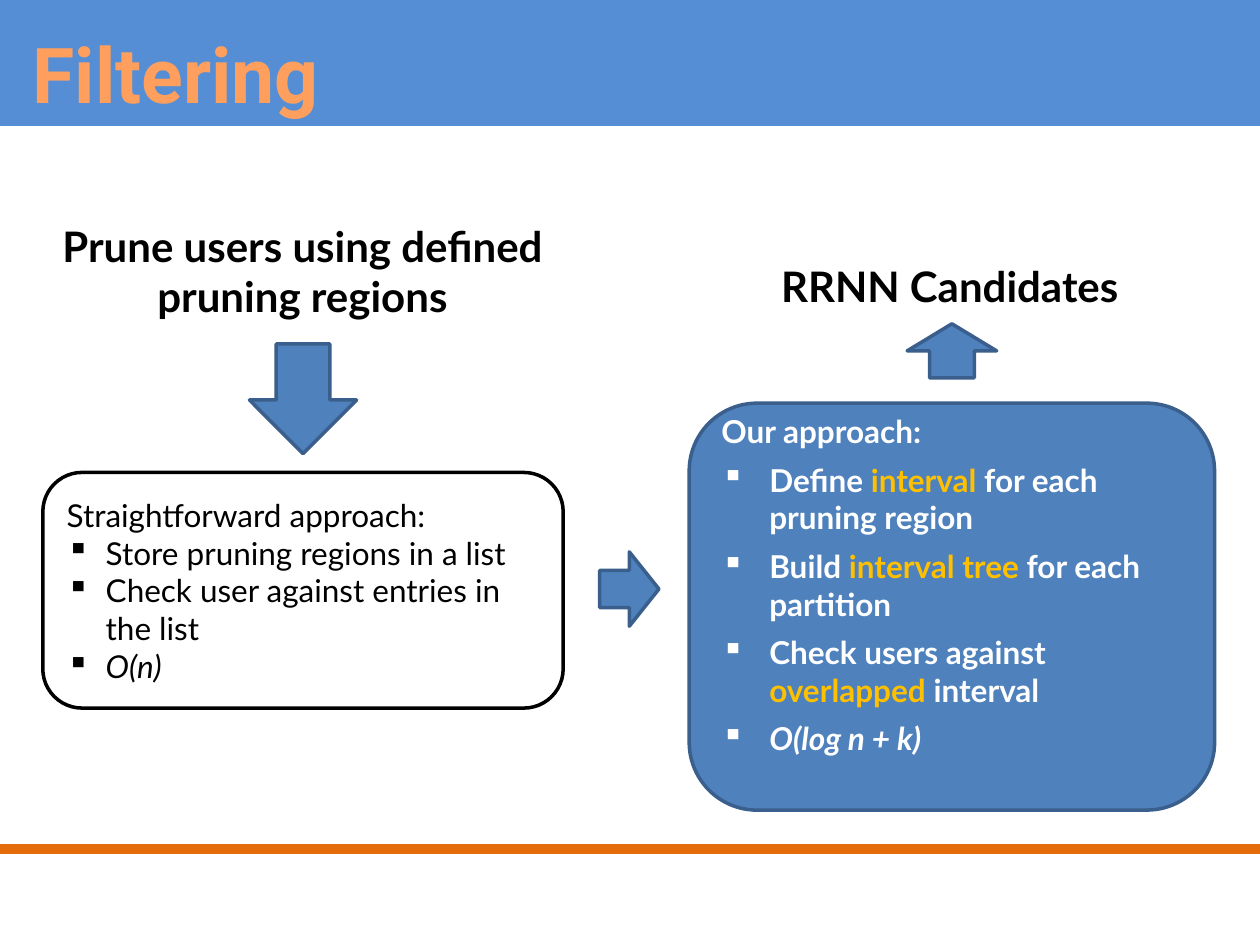
from lxml import etree
from pptx import Presentation
from pptx.dml.color import RGBColor
from pptx.enum import shapes, text
from pptx.oxml import ns
from pptx.util import Inches, Pt

COLORS = {
    "banner": "558ED5", "title": "FF9F5D", "rule": "E46C0A", "ink": "000000",
    "blue": "4F81BD", "edge": "3A5F8C", "white": "FFFFFF", "accent": "FFC000",
}
HEADING = {"name": "Lato", "size": Pt(24), "bold": True}
PLAIN = {"name": "Lato", "size": Pt(18), "bold": False}
STRONG = {"name": "Lato", "size": Pt(18), "bold": True}

# Each paragraph is a list of (words, style) runs.
STRAIGHTFORWARD = [
    [("Straightforward approach:", "")],
    [("Store pruning regions in a list", "")],
    [("Check user against entries in the list", "")],
    [("O(n)", "italic")],
]
OUR_APPROACH = [
    [("Our approach:", "")],
    [("Define ", ""), ("interval", "accent"), (" for each pruning region", "")],
    [("Build ", ""), ("interval tree ", "accent"), ("for each partition", "")],
    [("Check users against ", ""), ("overlapped ", "accent"), ("interval", "")],
    [("O(log n + k)", "italic")],
]


def rgb(name):
    return RGBColor.from_string(COLORS[name])


def box(left, top, width, height):
    return [Inches(v) for v in (left, top, width, height)]


def add_run(p, words, color, font):
    r = p.add_run()
    r.text = words
    for name, value in font.items():
        setattr(r.font, name, value)
    r.font.color.rgb = rgb(color)


def add_bullet(p, indent):
    pPr = p._p.get_or_add_pPr()
    pPr.set("marL", str(Inches(indent)))
    pPr.set("indent", str(-Inches(indent)))
    etree.SubElement(pPr, ns.qn("a:buChar")).set("char", "▪")


def add_preset(s, kind, area, fill, line):
    sp = s.shapes.add_shape(kind, *area)
    sp.shadow.inherit = False
    if fill:
        sp.fill.solid()
        sp.fill.fore_color.rgb = rgb(fill)
    else:
        sp.fill.background()
    sp.line.color.rgb = rgb(line)
    sp.line.width = Pt(2)
    return sp


def add_banner(s, width):
    builder = s.shapes.build_freeform(0, 0, scale=Inches(1))
    builder.add_line_segments([(width, 0), (width, 1.02), (3.95, 1.26), (0, 1.41)])
    sp = builder.convert_to_shape()
    sp.shadow.inherit = False
    sp.fill.solid()
    sp.fill.fore_color.rgb = rgb("banner")
    sp.line.fill.background()
    # The banner goes behind the title placeholder.
    s.shapes._spTree.insert(2, sp._element)


def add_rule(s, width, y):
    line = s.shapes.add_connector(
        shapes.MSO_CONNECTOR.STRAIGHT, 0, Inches(y), Inches(width), Inches(y))
    line.line.color.rgb = rgb("rule")
    line.line.width = Pt(6)
    etree.SubElement(line._element.spPr, ns.qn("a:effectLst"))


def fill_title(s, area, words):
    sp = s.shapes.title
    sp.left, sp.top, sp.width, sp.height = area
    tf = sp.text_frame
    tf.word_wrap = False
    tf.auto_size = text.MSO_AUTO_SIZE.NONE
    p = tf.paragraphs[0]
    p.alignment = text.PP_ALIGN.LEFT
    add_run(p, words, "title", {"name": "Roboto", "size": Pt(44), "bold": True})


def add_heading(s, area, words, wrap):
    tf = s.shapes.add_textbox(*area).text_frame
    tf.word_wrap = wrap
    p = tf.paragraphs[0]
    p.alignment = text.PP_ALIGN.CENTER if wrap else text.PP_ALIGN.LEFT
    add_run(p, words, "ink", HEADING)


def add_card(s, area, paragraphs, fill, line, color, font, indent, gap, bottom):
    """Rounded box with a lead line followed by a bulleted list."""
    sp = add_preset(s, shapes.MSO_SHAPE.ROUNDED_RECTANGLE, area, fill, line)
    tf = sp.text_frame
    tf.word_wrap = True
    tf.vertical_anchor = text.MSO_ANCHOR.MIDDLE
    tf.margin_bottom = Inches(bottom)
    for i, runs in enumerate(paragraphs):
        p = tf.add_paragraph() if i else tf.paragraphs[0]
        p.alignment = text.PP_ALIGN.LEFT
        p.space_after = Pt(gap)
        if i:
            add_bullet(p, indent)
        for words, style in runs:
            add_run(p, words, "accent" if style == "accent" else color,
                    {**font, "italic": style == "italic"})


def build_filtering_slide(prs):
    s = prs.slides.add_slide(prs.slide_layouts[5])
    add_banner(s, 10)
    add_rule(s, 10, 6.74)
    fill_title(s, box(0.16, 0.16, 2.78, 0.84), "Filtering")

    add_heading(s, box(0.34, 1.7, 4.12, 0.91),
                "Prune users using defined pruning regions", True)
    add_card(s, box(0.34, 3.75, 4.13, 1.87), STRAIGHTFORWARD,
             None, "ink", "ink", PLAIN, indent=0.31, gap=0, bottom=0.05)
    add_card(s, box(5.47, 3.2, 4.17, 3.23), OUR_APPROACH,
             "blue", "edge", "white", STRONG, indent=0.38, gap=6, bottom=0.4)
    add_heading(s, box(6.1, 2.02, 2.92, 0.5), "RRNN Candidates", False)

    for kind, area in (
        (shapes.MSO_SHAPE.RIGHT_ARROW, box(4.76, 4.38, 0.47, 0.59)),
        (shapes.MSO_SHAPE.DOWN_ARROW, box(1.98, 2.73, 0.85, 0.87)),
        (shapes.MSO_SHAPE.UP_ARROW, box(7.2, 2.57, 0.71, 0.43)),
    ):
        add_preset(s, kind, area, "blue", "edge")


def main():
    prs = Presentation()
    prs.slide_width, prs.slide_height = Inches(10), Inches(7.5)
    build_filtering_slide(prs)
    prs.save("out.pptx")


if __name__ == "__main__":
    main()
